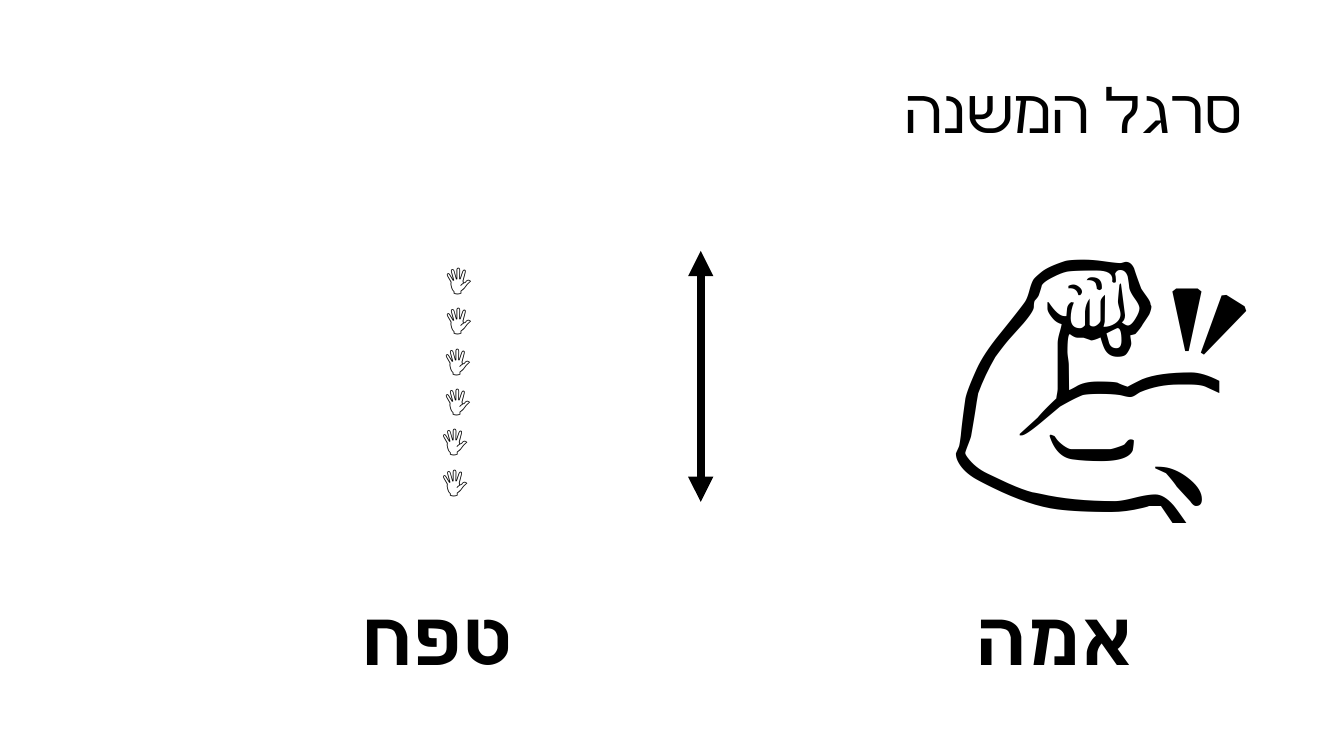
from pptx import Presentation
from pptx.dml.color import RGBColor
from pptx.enum.shapes import MSO_CONNECTOR
from pptx.enum.text import MSO_ANCHOR, MSO_AUTO_SIZE, PP_ALIGN
from pptx.oxml.ns import qn
from pptx.util import Inches, Pt
from lxml.etree import SubElement

FONT = "Karla"
COLORS = {"ink": "000000", "page": "FFFFFF"}
TITLE = "סרגל המשנה "
ARM = "💪"
HAND = "🖐️"
# Each line is a list of (text, size) runs
HANDS = (
    [[(HAND + " ", 24)]] * 2
    + [[(HAND, 24), (" ", 18)]] * 2
    + [[(HAND, 24)]] * 2
)
LABELS = [("אמה", 9.34), ("טפח", 3.21)]


def write(frame, lines, align=PP_ALIGN.CENTER, bold=False, spacing=None):
    """Fill a text frame with right-to-left lines of (text, size) runs."""
    for i, runs in enumerate(lines):
        para = frame.add_paragraph() if i else frame.paragraphs[0]
        para.alignment = align
        if spacing:
            para.line_spacing = spacing
        para._p.get_or_add_pPr().set("rtl", "1")
        for text, size in runs:
            run = para.add_run()
            run.text = text
            font = run.font
            font.size, font.bold = Pt(size), bold
            font.color.rgb = RGBColor.from_string(COLORS["ink"])
            font.name = FONT
            SubElement(font._element, qn("a:cs"), typeface=FONT)


def add_box(slide, place, lines, **style):
    box = slide.shapes.add_textbox(*map(Inches, place))
    frame = box.text_frame
    frame.word_wrap = True
    frame.auto_size = MSO_AUTO_SIZE.SHAPE_TO_FIT_TEXT
    write(frame, lines, **style)


def add_title(slide):
    title = slide.shapes.title
    title.left, title.top = Inches(0.92), Inches(0.4)
    title.width, title.height = Inches(11.5), Inches(1.45)
    title.text_frame.vertical_anchor = MSO_ANCHOR.MIDDLE
    write(title.text_frame, [[(TITLE, 44)]], align=PP_ALIGN.RIGHT, spacing=0.9)


def add_arm(slide):
    place = map(Inches, (8.94, 1.85, 3.63, 3.77))
    table = slide.shapes.add_table(1, 1, *place).table
    table.first_row = table.horz_banding = False
    cell = table.cell(0, 0)
    cell.fill.background()
    cell.vertical_anchor = MSO_ANCHOR.MIDDLE
    write(cell.text_frame, [[(ARM, 199)]], align=PP_ALIGN.RIGHT)


def add_arrow(slide):
    ends = map(Inches, (6.95, 4.98, 6.95, 2.49))
    arrow = slide.shapes.add_connector(MSO_CONNECTOR.STRAIGHT, *ends)
    arrow.line.width = Pt(6)
    arrow.line.color.rgb = RGBColor.from_string(COLORS["ink"])
    for end in ("headEnd", "tailEnd"):
        SubElement(arrow.line._get_or_add_ln(), qn("a:" + end), type="triangle")
    SubElement(arrow._element.spPr, qn("a:effectLst"))


def main():
    prs = Presentation()
    prs.slide_width, prs.slide_height = Inches(13.33), Inches(7.5)
    slide = prs.slides.add_slide(prs.slide_layouts[5])
    back = slide.background.fill
    back.solid()
    back.fore_color.rgb = RGBColor.from_string(COLORS["page"])
    add_title(slide)
    add_arm(slide)
    add_arrow(slide)
    add_box(slide, (1.18, 2.54, 6.67, 2.52), HANDS)
    for text, left in LABELS:
        add_box(slide, (left, 5.8, 2.25, 1.01), [[(text, 54)]], bold=True)
    prs.save("out.pptx")


if __name__ == "__main__":
    main()
